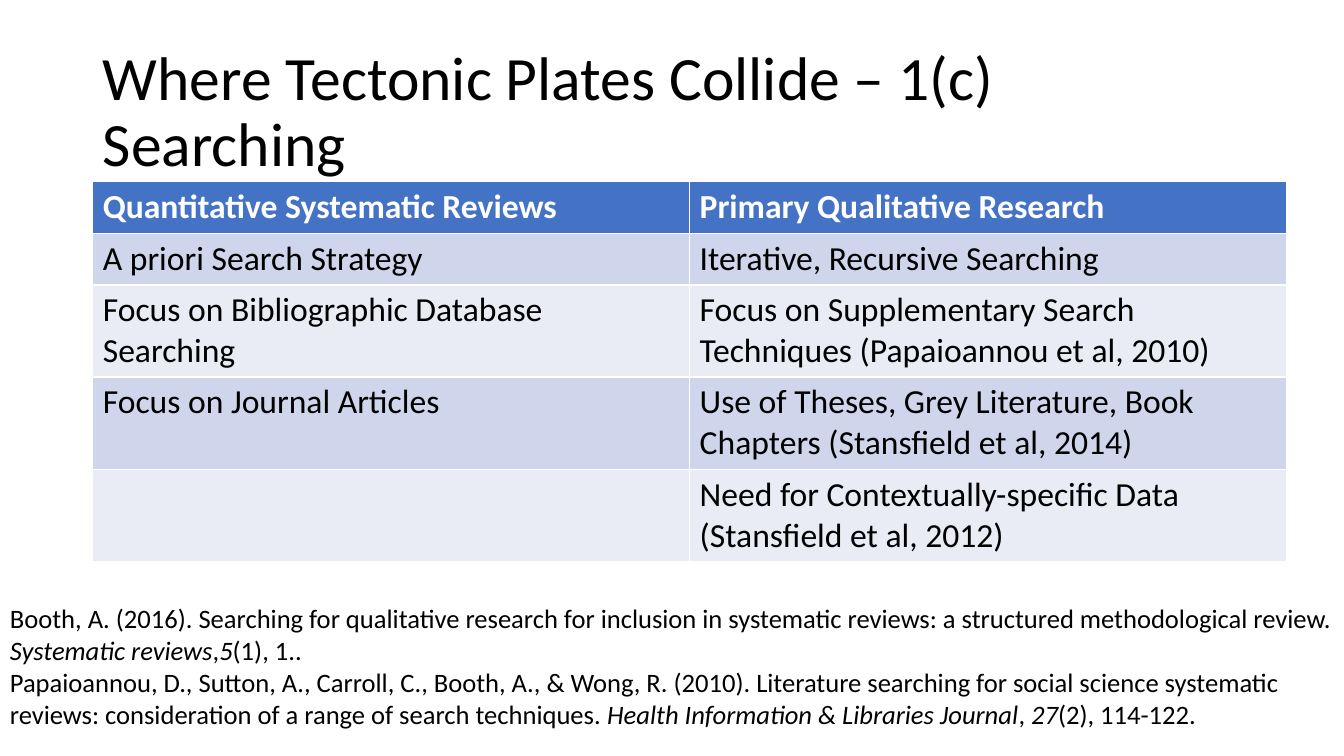
"""Build a slide comparing search approaches in quantitative and qualitative reviews."""
from pptx import Presentation
from pptx.dml.color import RGBColor as RGB
from pptx.enum.text import MSO_ANCHOR as Anchor, MSO_AUTO_SIZE as AutoSize, PP_ALIGN as Align
from pptx.util import Inches, Pt

TITLE = "Where Tectonic Plates Collide – 1(c) Searching"
ROWS = [
    ("Quantitative Systematic Reviews", "Primary Qualitative Research"),
    ("A priori Search Strategy", "Iterative, Recursive Searching"),
    ("Focus on Bibliographic Database Searching",
     "Focus on Supplementary Search Techniques (Papaioannou et al, 2010)"),
    ("Focus on Journal Articles",
     "Use of Theses, Grey Literature, Book Chapters (Stansfield et al, 2014)"),
    ("", "Need for Contextually-specific Data (Stansfield et al, 2012)"),
]
REFERENCES = [
    [("Booth, A. (2016). Searching for qualitative research for inclusion in systematic "
      "reviews: a structured methodological review. ", False),
     ("Systematic reviews", True), (",", False), ("5", True), ("(1), 1..", False)],
    [("Papaioannou, D., Sutton, A., Carroll, C., Booth, A., & Wong, R. (2010). Literature "
      "searching for social science systematic reviews: consideration of a range of search "
      "techniques. ", False),
     ("Health Information & Libraries Journal", True), (", ", False), ("27", True),
     ("(2), 114-122.", False)],
]
COLORS = {"header": "4472C4", "odd": "CFD5EA", "even": "E9EBF5",
          "text": "000000", "header_text": "FFFFFF"}
FONT = "Calibri"
SLIDE_W, SLIDE_H = 13.33, 7.5
LEFT = 0.92
TABLE_TOP, COL_W = 1.8, 5.92
ROW_HEIGHTS = [0.52, 0.42, 0.84, 0.73, 0.84]
REFS_TOP, REFS_H = 5.92, 1.68


def add_run(p, text, size, color="text", bold=False, italic=False):
    """Append one formatted run to a paragraph."""
    r = p.add_run()
    r.text = text
    f = r.font
    f.name, f.size, f.bold, f.italic = FONT, Pt(size), bold, italic
    f.color.rgb = RGB.from_string(COLORS[color])


def add_title(s):
    """Place the title in its placeholder."""
    sp = s.shapes.title
    sp.left, sp.top, sp.width, sp.height = map(Inches, (LEFT, 0.4, 11.5, 1.45))
    tf = sp.text_frame
    tf.auto_size, tf.vertical_anchor, tf.word_wrap = AutoSize.NONE, Anchor.MIDDLE, True
    p = tf.paragraphs[0]
    p.alignment, p.line_spacing = Align.LEFT, 0.9
    add_run(p, TITLE, 44)


def add_comparison(s):
    """Add the two-column comparison table."""
    n = len(ROWS[0])
    box = map(Inches, (LEFT, TABLE_TOP, n * COL_W, sum(ROW_HEIGHTS)))
    table = s.shapes.add_table(len(ROWS), n, *box).table
    for col in table.columns:
        col.width = Inches(COL_W)
    for i, (texts, height) in enumerate(zip(ROWS, ROW_HEIGHTS)):
        table.rows[i].height = Inches(height)
        header = i == 0
        fill = "header" if header else ("odd" if i % 2 else "even")
        for j, text in enumerate(texts):
            cell = table.cell(i, j)
            cell.fill.solid()
            cell.fill.fore_color.rgb = RGB.from_string(COLORS[fill])
            if text:
                add_run(cell.text_frame.paragraphs[0], text, 24,
                        "header_text" if header else "text", bold=header)


def add_references(s):
    """Add the references across the foot of the slide."""
    tf = s.shapes.add_textbox(*map(Inches, (0, REFS_TOP, SLIDE_W, REFS_H))).text_frame
    tf.word_wrap, tf.auto_size = True, AutoSize.SHAPE_TO_FIT_TEXT
    for i, runs in enumerate(REFERENCES):
        p = tf.add_paragraph() if i else tf.paragraphs[0]
        for text, italic in runs:
            add_run(p, text, 19, italic=italic)


def main():
    """Create and save the slide."""
    prs = Presentation()
    prs.slide_width, prs.slide_height = Inches(SLIDE_W), Inches(SLIDE_H)
    s = prs.slides.add_slide(prs.slide_layouts[5])
    add_title(s)
    add_comparison(s)
    add_references(s)
    prs.save("out.pptx")


if __name__ == "__main__":
    main()
